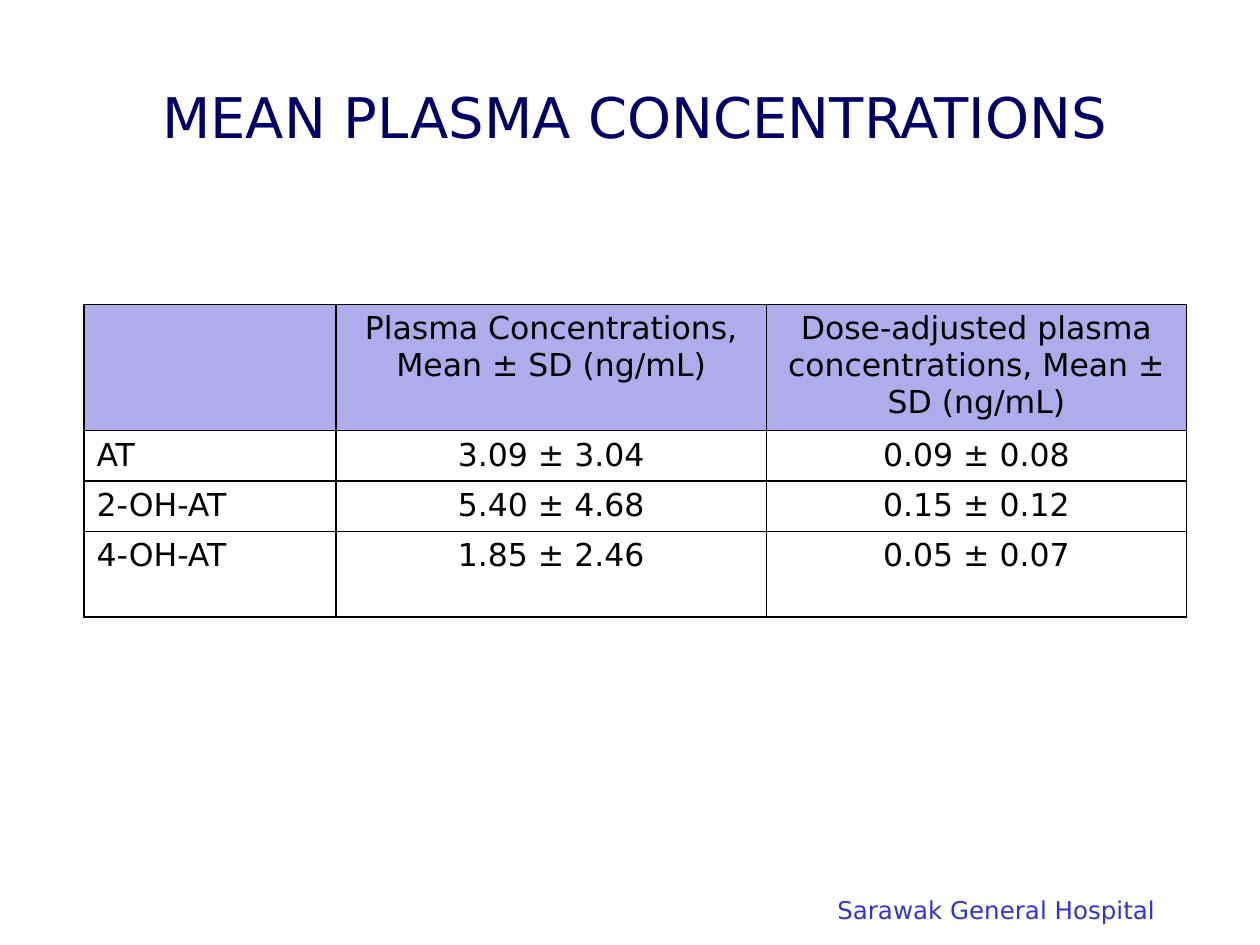
from lxml import etree
from pptx import Presentation
from pptx.dml.color import RGBColor
from pptx.enum.text import MSO_ANCHOR, PP_ALIGN
from pptx.oxml.ns import qn
from pptx.util import Pt

CENTER, LEFT = PP_ALIGN.CENTER, PP_ALIGN.LEFT
MIDDLE = MSO_ANCHOR.MIDDLE
FONT = "DejaVu Sans"
COLORS = {
    "title": "000066",
    "footer": "3333CC",
    "header": "ADADEB",
    "text": "000000",
    "border": "000000",
}
ROWS = [
    ["", "Plasma Concentrations, Mean ± SD (ng/mL)",
     "Dose-adjusted plasma concentrations, Mean ± SD (ng/mL)"],
    ["AT", "3.09 ± 3.04", "0.09 ± 0.08"],
    ["2-OH-AT", "5.40 ± 4.68", "0.15 ± 0.12"],
    ["4-OH-AT", "1.85 ± 2.46", "0.05 ± 0.07"],
]
COL_WIDTHS = [144, 246, 240]
ROW_HEIGHTS = [72, 28.8, 28.8, 49]


def write(tf, text, size, color, align):
    tf.text = text
    p = tf.paragraphs[0]
    p.alignment = align
    for font in [p.font] + [r.font for r in p.runs]:
        font.name = FONT
        font.size = Pt(size)
        font.bold = False
        font.color.rgb = RGBColor.from_string(COLORS[color])


def add_borders(cell):
    tc_pr = cell._tc.get_or_add_tcPr()
    for side in ("lnL", "lnR", "lnT", "lnB"):
        ln = etree.SubElement(tc_pr, qn(f"a:{side}"), w=str(Pt(1)))
        fill = etree.SubElement(ln, qn("a:solidFill"))
        etree.SubElement(fill, qn("a:srgbClr"), val=COLORS["border"])


def place_title(s, x, y, w, h):
    sp = s.shapes.title
    sp.left, sp.top, sp.width, sp.height = Pt(x), Pt(y), Pt(w), Pt(h)
    tf = sp.text_frame
    tf.word_wrap = True
    tf.vertical_anchor = MIDDLE
    write(tf, "MEAN PLASMA CONCENTRATIONS", 32, "title", CENTER)


def add_results(s, x, y, w, h):
    frame = s.shapes.add_table(len(ROWS), len(COL_WIDTHS), Pt(x), Pt(y), Pt(w), Pt(h))
    table = frame.table
    table.first_row = table.horz_banding = False
    for column, width in zip(table.columns, COL_WIDTHS):
        column.width = Pt(width)
    for i, (row, height, texts) in enumerate(zip(table.rows, ROW_HEIGHTS, ROWS)):
        row.height = Pt(height)
        for j, (cell, text) in enumerate(zip(row.cells, texts)):
            write(cell.text_frame, text, 18, "text", CENTER if j else LEFT)
            add_borders(cell)
            if i == 0:
                cell.fill.solid()
                cell.fill.fore_color.rgb = RGBColor.from_string(COLORS["header"])
            else:
                cell.fill.background()


def add_footer(s, x, y, w, h):
    tf = s.shapes.add_textbox(Pt(x), Pt(y), Pt(w), Pt(h)).text_frame
    tf.margin_left = tf.margin_right = tf.margin_top = tf.margin_bottom = 0
    tf.word_wrap = False
    write(tf, "Sarawak General Hospital", 14, "footer", LEFT)


def main():
    prs = Presentation()
    prs.slide_width, prs.slide_height = Pt(720), Pt(540)
    s = prs.slides.add_slide(prs.slide_layouts[5])
    add_footer(s, 478.5, 511.2, 182.2, 16.6)
    place_title(s, 24, 21.6, 678, 90)
    add_results(s, 48, 174, sum(COL_WIDTHS), sum(ROW_HEIGHTS))
    prs.save("out.pptx")


if __name__ == "__main__":
    main()
